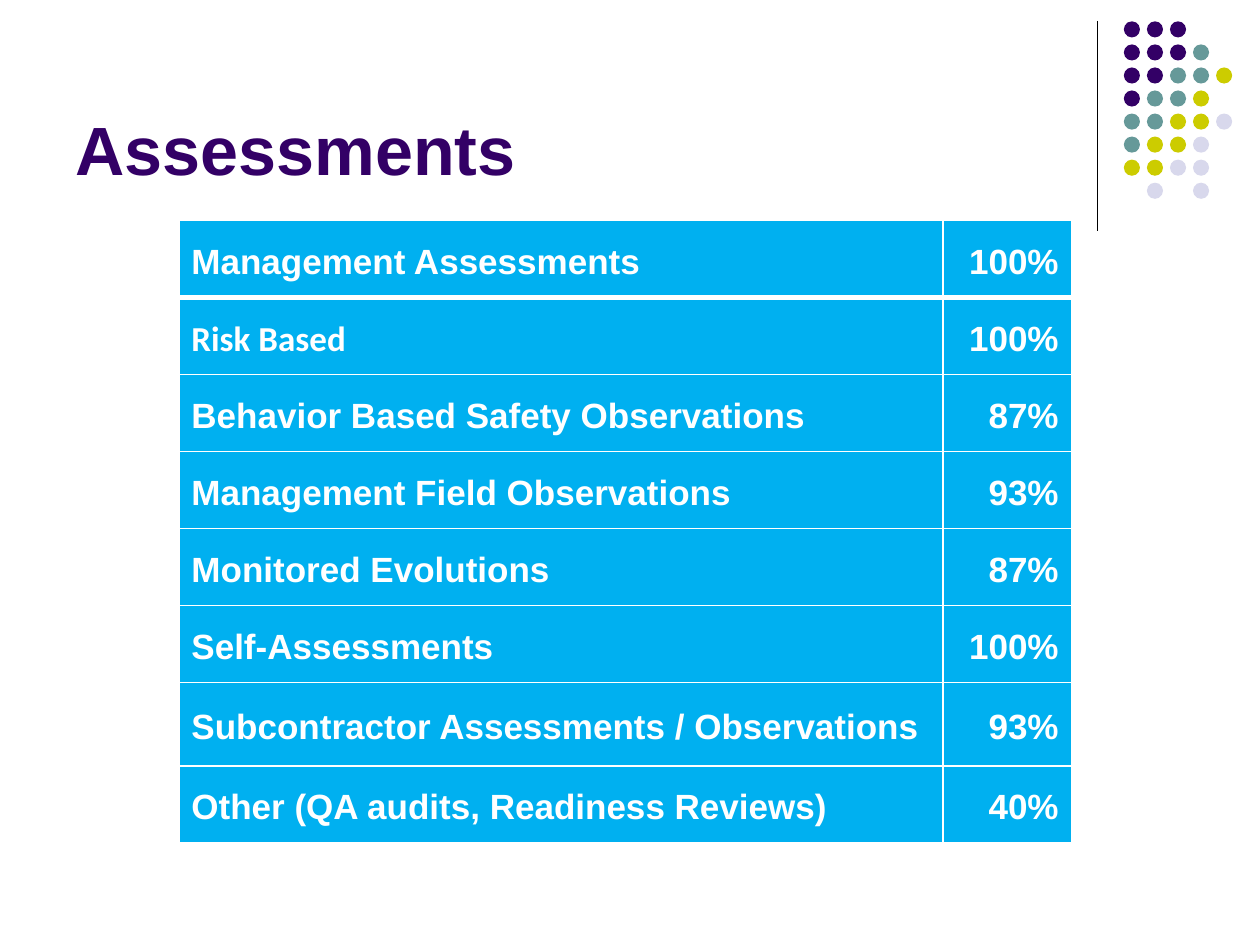
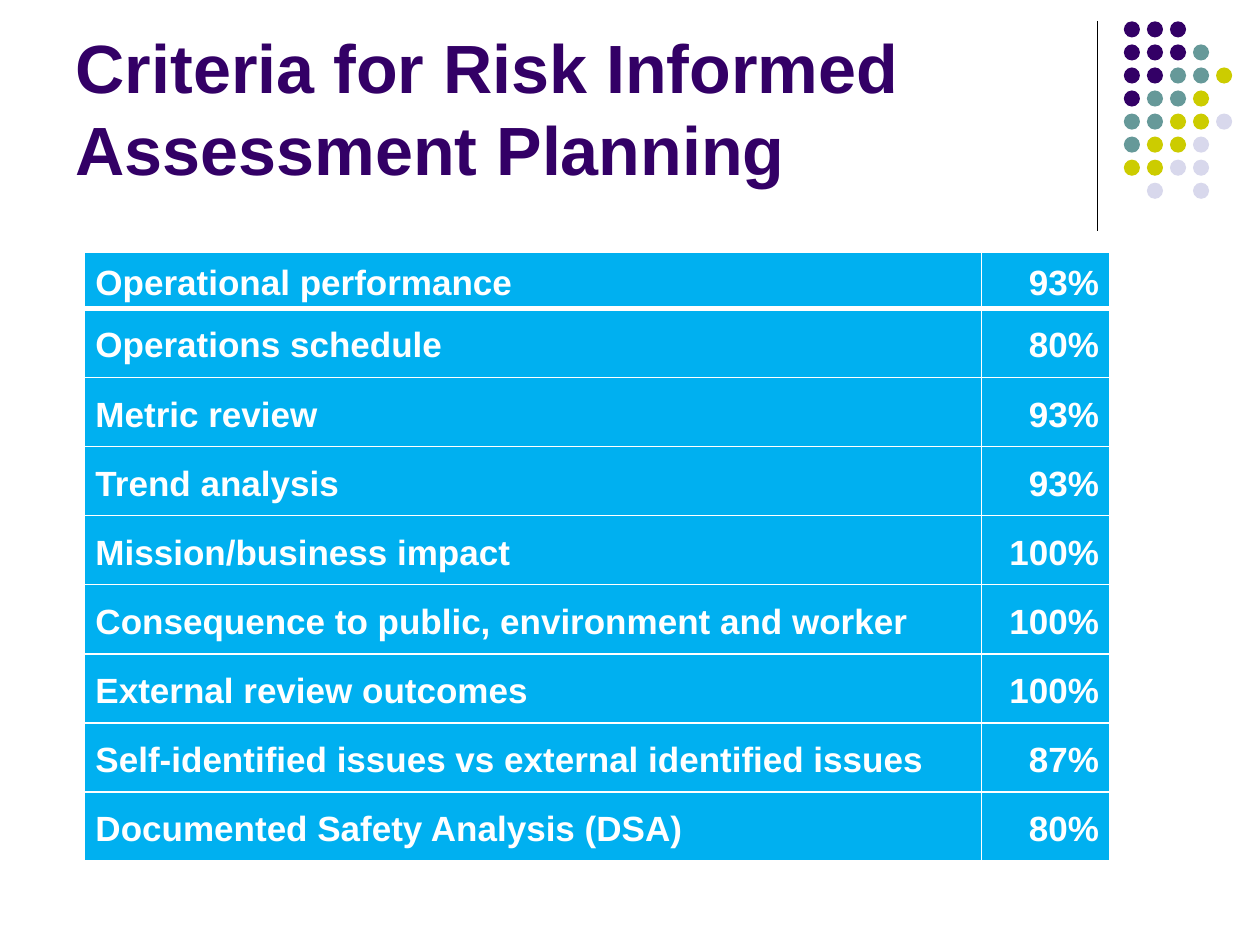
"""Build two slides of assessment survey results."""
import pptx
import pptx.dml.color
import pptx.enum.dml
import pptx.enum.shapes
import pptx.enum.text
import pptx.oxml
import pptx.oxml.ns
import pptx.util

Pt = pptx.util.Pt
RGBColor = pptx.dml.color.RGBColor

PURPLE = RGBColor(0x33, 0x00, 0x66)
TEAL = RGBColor(0x66, 0x99, 0x99)
OLIVE = RGBColor(0xCC, 0xCC, 0x00)
LAVENDER = RGBColor(0xD8, 0xD8, 0xEC)
BLUE = RGBColor(0x00, 0xB0, 0xF0)
WHITE = RGBColor(0xFF, 0xFF, 0xFF)
BLACK = RGBColor(0x00, 0x00, 0x00)

DOT_COLOURS = {"P": PURPLE, "T": TEAL, "O": OLIVE, "L": LAVENDER}
DOT_ROWS = ["PPP", "PPPT", "PPTTO", "PTTO", "TTOOL", "TOOL", "OOLL", " L L"]
DOT_LEFT, DOT_TOP, DOT_PITCH, DOT_SIZE = 642.2, 12.2, 13.17, 9.2

TITLE_FONT = {"name": "Arial", "size": Pt(39), "bold": True}
CELL_FONT = {"name": "Arial", "size": Pt(20), "bold": True}

ASSESSMENTS = [
    ("Management Assessments", "100%"),
    ("Risk Based", "100%"),
    ("Behavior Based Safety Observations", "87%"),
    ("Management Field Observations", "93%"),
    ("Monitored Evolutions", "87%"),
    ("Self-Assessments", "100%"),
    ("Subcontractor Assessments / Observations", "93%"),
    ("Other (QA audits, Readiness Reviews)", "40%"),
]
CRITERIA = [
    ("Operational performance", "93%"),
    ("Operations schedule", "80%"),
    ("Metric review", "93%"),
    ("Trend analysis", "93%"),
    ("Mission/business impact", "100%"),
    ("Consequence to public, environment and worker", "100%"),
    ("External review outcomes", "100%"),
    ("Self-identified issues vs external identified issues", "87%"),
    ("Documented Safety Analysis (DSA)", "80%"),
]


def assign(target, values):
    """Set each named attribute of the target."""
    for name, value in values.items():
        setattr(target, name, value)


class SlideBuilder:
    """Holds the deck style and the slide being built."""

    def __init__(self, deck):
        """Keep the deck and its title-only layout."""
        self.deck = deck
        self.layout = deck.slide_layouts.get_by_name("Title Only")
        self.page = None

    def start_page(self, title):
        """Add a slide with the shared decoration and a title."""
        self.page = self.deck.slides.add_slide(self.layout)
        self.rule()
        self.dots()
        self.title(title)

    def rule(self):
        """Draw the vertical line beside the dots."""
        line = self.page.shapes.add_connector(
            pptx.enum.shapes.MSO_CONNECTOR.STRAIGHT, Pt(627), Pt(12), Pt(627), Pt(132))
        line.line.color.rgb = BLACK
        line.line.width = Pt(0.75)
        properties = line._element.spPr
        properties.append(pptx.oxml.parse_xml(
            f"<a:effectLst {pptx.oxml.ns.nsdecls('a')}/>"))

    def dots(self):
        """Draw the corner grid of coloured dots."""
        for row, codes in enumerate(DOT_ROWS):
            for column, code in enumerate(codes):
                if code in DOT_COLOURS:
                    dot = self.page.shapes.add_shape(
                        pptx.enum.shapes.MSO_SHAPE.OVAL,
                        Pt(DOT_LEFT + column * DOT_PITCH), Pt(DOT_TOP + row * DOT_PITCH),
                        Pt(DOT_SIZE), Pt(DOT_SIZE))
                    dot.shadow.inherit = False
                    dot.fill.solid()
                    dot.fill.fore_color.rgb = DOT_COLOURS[code]
                    dot.line.fill.background()

    def title(self, text):
        """Place and format the title placeholder."""
        box = self.page.shapes.title
        assign(box, {"left": Pt(36), "top": Pt(9.36), "width": Pt(594), "height": Pt(102.24)})
        frame = box.text_frame
        frame.text = text
        assign(frame, {"auto_size": pptx.enum.text.MSO_AUTO_SIZE.NONE, "word_wrap": True,
                       "vertical_anchor": pptx.enum.text.MSO_ANCHOR.BOTTOM})
        para = frame.paragraphs[0]
        para.alignment = pptx.enum.text.PP_ALIGN.LEFT
        for span in para.runs:
            assign(span.font, TITLE_FONT)
            span.font.color.rgb = PURPLE

    def table(self, rows, left, top, widths, heights, insets, fonts=None):
        """Add a two-column table, with font names by row label if given."""
        grid = self.page.shapes.add_table(
            len(rows), len(widths), Pt(left), Pt(top),
            Pt(sum(widths)), Pt(sum(heights))).table
        for column, width in zip(grid.columns, widths):
            column.width = Pt(width)
        for index, (values, height) in enumerate(zip(rows, heights)):
            grid.rows[index].height = Pt(height)
            for column, text in enumerate(values):
                cell = grid.cell(index, column)
                self.cell(cell, text, column > 0, insets, (fonts or {}).get(text, "Arial"))
                self.borders(cell, {"L": 1, "R": 1, "T": 3 if index == 1 else 1,
                                    "B": 3 if index == 0 else 1})
                cell.fill.solid()
                cell.fill.fore_color.rgb = BLUE

    def cell(self, cell, text, is_value, insets, font_name):
        """Write and format the text of one cell."""
        side, edge = map(Pt, insets)
        cell.text = text
        assign(cell, {"margin_left": side, "margin_right": side, "margin_top": edge,
                      "margin_bottom": edge,
                      "vertical_anchor": pptx.enum.text.MSO_ANCHOR.MIDDLE})
        align = pptx.enum.text.PP_ALIGN
        para = cell.text_frame.paragraphs[0]
        assign(para, {"alignment": align.RIGHT if is_value else align.LEFT,
                      "line_spacing": 1.15})
        font = para.runs[0].font
        assign(font, CELL_FONT | {"name": font_name})
        font.color.rgb = WHITE

    def borders(self, cell, widths):
        """Give a cell white borders of the given widths by side."""
        properties = cell._tc.get_or_add_tcPr()
        for side, width in widths.items():
            properties.append(pptx.oxml.parse_xml(
                f'<a:ln{side} {pptx.oxml.ns.nsdecls("a")} w="{Pt(width)}">'
                f'<a:solidFill><a:srgbClr val="{WHITE}"/></a:solidFill></a:ln{side}>'))


def main():
    """Build the slides and save the deck."""
    deck = pptx.Presentation()
    assign(deck, {"slide_width": Pt(720), "slide_height": Pt(540)})
    builder = SlideBuilder(deck)

    builder.start_page("Assessments")
    builder.table(ASSESSMENTS, 102.2, 126, (436.8, 73.2), [44] * 6 + [47.8, 44],
                  (7.2, 3.6), {"Risk Based": "Calibri"})

    builder.start_page("Criteria for Risk Informed\vAssessment Planning")
    builder.table(CRITERIA, 48.4, 144.3, (512.4, 73.4), [26] + [39.5] * 8, (6.2, 3.1))

    deck.save("out.pptx")


if __name__ == "__main__":
    main()
